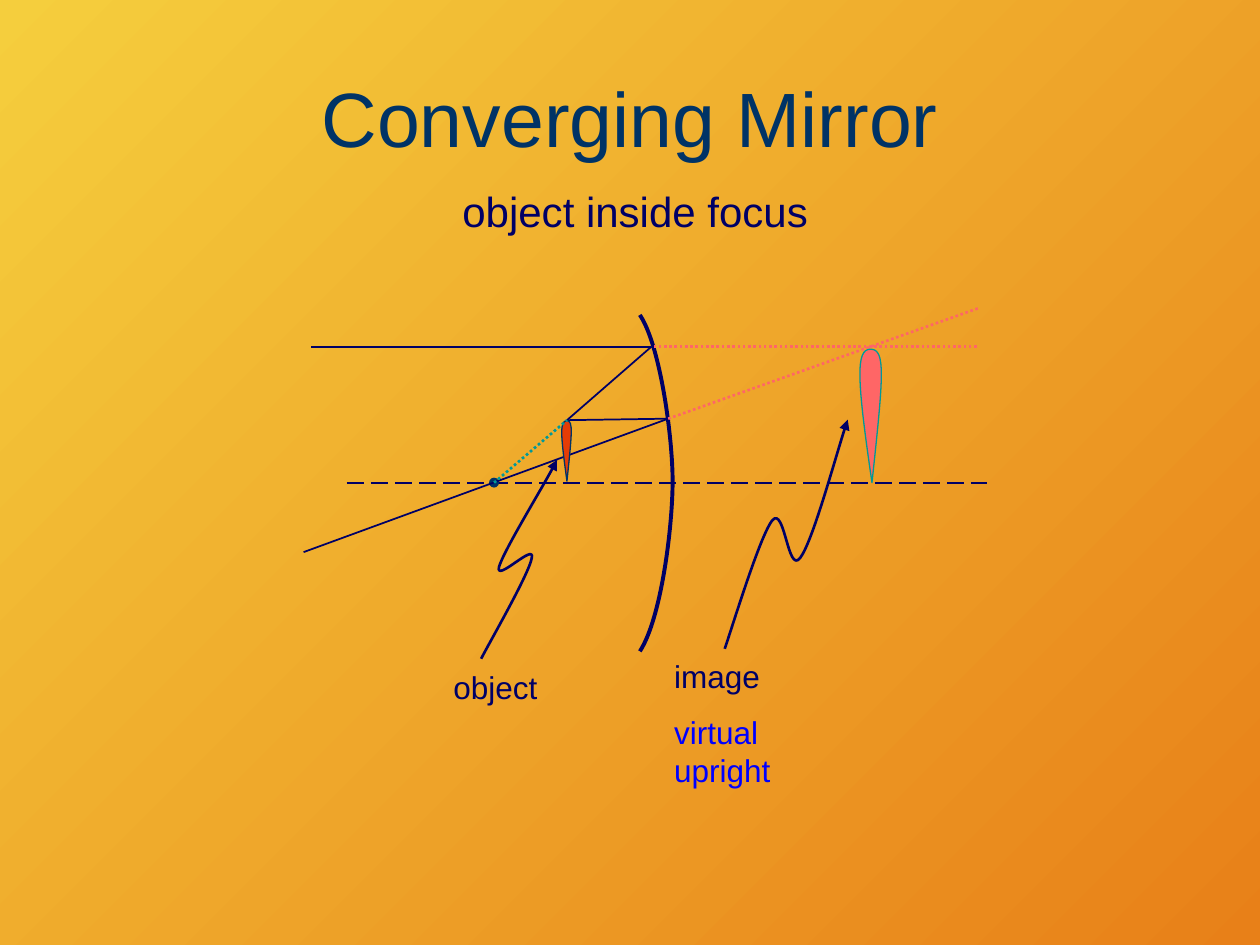
from lxml.etree import SubElement
from pptx import Presentation
from pptx.dml.color import RGBColor
from pptx.enum.dml import MSO_LINE_DASH_STYLE as Dash
from pptx.enum.shapes import MSO_CONNECTOR as Connector, MSO_SHAPE as Shape
from pptx.enum.text import MSO_ANCHOR as Anchor, MSO_AUTO_SIZE as AutoSize, PP_ALIGN as Align
from pptx.oxml.ns import qn
from pptx.util import Cm, Pt

NAVY, SLATE, TEAL, PINK = "000066", "003366", "009999", "FF6666"
AXIS_Y = 9.73
FOCUS = (9.96, AXIS_Y)
OBJECT_TIP = (11.43, 8.47)
HIGH_HIT = (13.13, 6.99)
LOW_HIT = (13.47, 8.44)


def rgb(value):
    return RGBColor.from_string(value)


def paint_background(slide, start, end):
    fill = slide.background.fill
    fill.gradient()
    fill.gradient_angle = 315
    for stop, color in zip(fill.gradient_stops, (start, end)):
        stop.color.rgb = rgb(color)


def style_line(line, color, width, dash=None, arrow=False):
    line.color.rgb = rgb(color)
    line.width = Pt(width)
    if dash:
        line.dash_style = dash
    if arrow:
        SubElement(line._get_or_add_ln(), qn("a:tailEnd"), type="triangle")


def add_line(slide, start, end, color=NAVY, width=1, dash=None):
    line = slide.shapes.add_connector(
        Connector.STRAIGHT, *(Cm(value) for value in start + end))
    style_line(line.line, color, width, dash)
    SubElement(line._element.spPr, qn("a:effectLst"))


def add_curve(slide, points, color, width, fill=None, arrow=False):
    """Draw cubic curves: a start point, then three points per curve."""
    start, *rest = [(Cm(x), Cm(y)) for x, y in points]
    builder = slide.shapes.build_freeform(*start)
    builder.add_line_segments(rest, close=fill is not None)
    curve = builder.convert_to_shape()
    # The builder makes straight segments; join each three into one curve.
    segments = list(curve._element.iter(qn("a:lnTo")))
    for first, second, third in zip(*[iter(segments)] * 3):
        first.tag = qn("a:cubicBezTo")
        for segment in (second, third):
            first.append(segment[0])
            segment.getparent().remove(segment)
    if fill:
        curve.fill.solid()
        curve.fill.fore_color.rgb = rgb(fill)
    else:
        curve.fill.background()
    style_line(curve.line, color, width, arrow=arrow)
    curve.shadow.inherit = False


def add_dot(slide, center, size, color):
    left, top = (Cm(value - size / 2) for value in center)
    dot = slide.shapes.add_shape(Shape.OVAL, left, top, Cm(size), Cm(size))
    dot.fill.solid()
    dot.fill.fore_color.rgb = rgb(color)
    dot.line.fill.background()
    dot.shadow.inherit = False


def add_run(para, text, size, color):
    span = para.add_run()
    span.text = text
    span.font.name = "Arial"
    span.font.size = Pt(size)
    span.font.color.rgb = rgb(color)


def add_title(slide, text):
    title = slide.shapes.title
    title.left, title.top, title.width, title.height = Cm(1.27), Cm(0.76), Cm(22.86), Cm(3.18)
    title.text_frame.vertical_anchor = Anchor.MIDDLE
    para = title.text_frame.paragraphs[0]
    para.alignment = Align.CENTER
    add_run(para, text, 44, SLATE)


def add_label(slide, place, paragraphs, size=18, align=Align.LEFT):
    """Each paragraph is a colour and its lines."""
    box = slide.shapes.add_textbox(*(Cm(value) for value in place))
    frame = box.text_frame
    frame.word_wrap = True
    frame.auto_size = AutoSize.SHAPE_TO_FIT_TEXT
    for index, (color, lines) in enumerate(paragraphs):
        para = frame.add_paragraph() if index else frame.paragraphs[0]
        para.alignment = align
        if index:
            para.space_before = Pt(10.3)
        for number, text in enumerate(lines):
            if number:
                para.add_line_break()
            add_run(para, text, size, color)


def add_mirror_and_axis(slide):
    add_curve(slide, [(12.9, 6.35), (13.31, 6.96), (13.56, 8.81), (13.56, 9.7),
                      (13.56, 10.59), (13.34, 12.45), (12.9, 13.13)], NAVY, 2.25)
    add_line(slide, (6.99, AXIS_Y), (19.89, AXIS_Y), width=1.25, dash=Dash.LONG_DASH)
    add_dot(slide, FOCUS, 0.2, SLATE)


def add_rays(slide):
    for start, end in [(OBJECT_TIP, LOW_HIT), (LOW_HIT, (6.12, 11.13)),
                       (OBJECT_TIP, HIGH_HIT), ((6.27, 6.99), HIGH_HIT)]:
        add_line(slide, start, end)
    for start, end in [(LOW_HIT, (19.76, 6.2)), ((19.69, 6.99), (13.18, 6.99))]:
        add_line(slide, start, end, PINK, 1.5, Dash.ROUND_DOT)


def add_object(slide):
    add_curve(slide, [(11.43, 9.7), (11.53, 8.74), (11.56, 8.48), (11.43, 8.48),
                      (11.28, 8.48), (11.3, 8.76), (11.43, 9.7)], SLATE, 0.75, "E53C05")
    add_label(slide, (8.89, 13.34, 2.49, 1.02), [(NAVY, ["object"])])
    add_curve(slide, [(9.7, 13.28), (9.88, 12.93), (10.67, 11.56), (10.72, 11.25),
                      (10.8, 10.92), (9.98, 11.76), (10.06, 11.43),
                      (10.16, 11.1), (11, 9.73), (11.23, 9.27)], NAVY, 1.5, arrow=True)


def add_image(slide):
    add_curve(slide, [(17.58, AXIS_Y), (17.81, 7.57), (17.86, 7.04), (17.55, 7.04),
                      (17.25, 7.04), (17.27, 7.62), (17.58, AXIS_Y)], TEAL, 0.75, PINK)
    add_label(slide, (13.34, 13.13, 2.49, 2.92),
              [(NAVY, ["image"]), ("0000FF", ["virtual", "upright"])])
    add_curve(slide, [(14.61, 13.08), (14.76, 12.65), (15.32, 10.8), (15.57, 10.49),
                      (15.82, 10.19), (15.88, 11.58), (16.13, 11.25),
                      (16.38, 10.92), (16.89, 9.04), (17.09, 8.46)], NAVY, 1.5, arrow=True)


def main():
    deck = Presentation()
    deck.slide_width, deck.slide_height = Cm(25.4), Cm(19.05)
    slide = deck.slides.add_slide(deck.slide_layouts[5])
    paint_background(slide, "F5CE3D", "E88018")
    add_title(slide, "Converging Mirror")
    add_mirror_and_axis(slide)
    add_rays(slide)
    add_object(slide)
    add_image(slide)
    add_line(slide, FOCUS, OBJECT_TIP, TEAL, 1.5, Dash.ROUND_DOT)
    add_label(slide, (8.46, 3.61, 8.69, 1.27), [(NAVY, ["object inside focus"])],
              size=24, align=Align.CENTER)
    deck.save("out.pptx")


if __name__ == "__main__":
    main()
